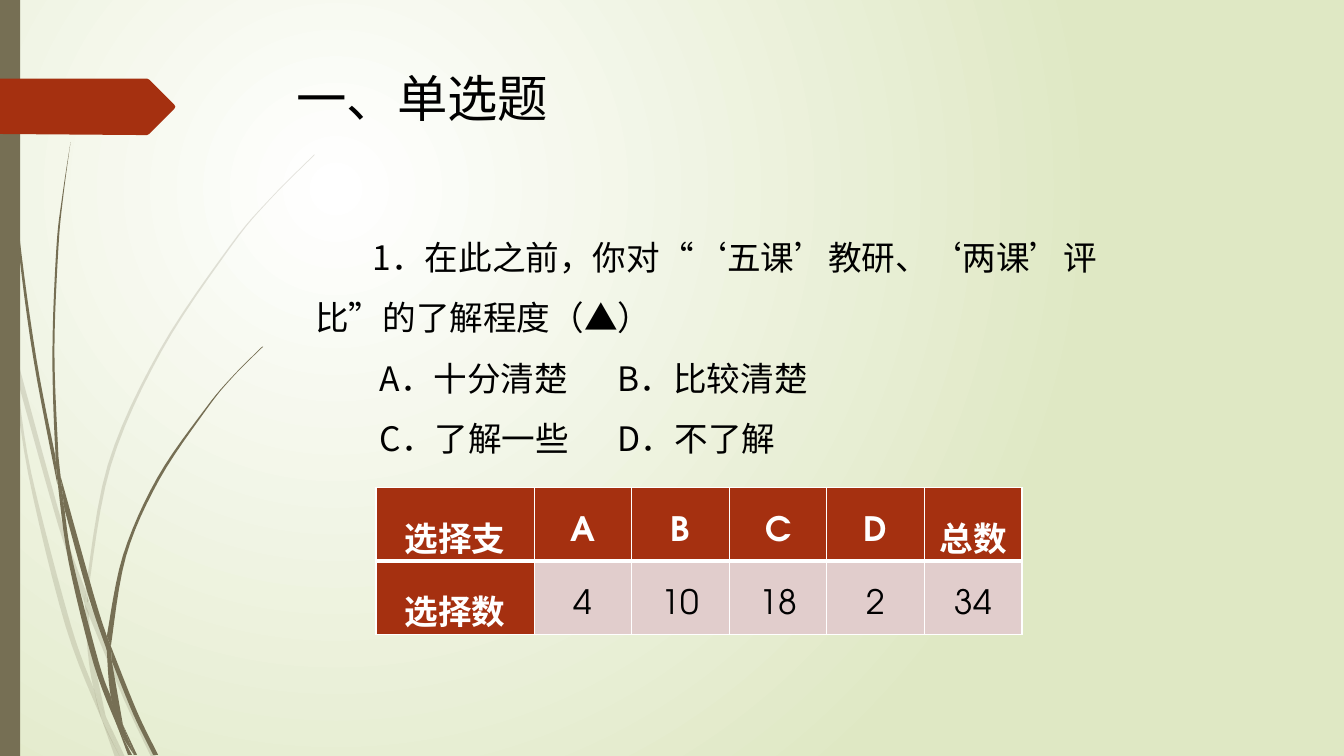
from dataclasses import dataclass

from lxml.etree import SubElement
from pptx import Presentation
from pptx.dml.color import RGBColor
from pptx.enum.lang import MSO_LANGUAGE_ID
from pptx.enum.shapes import MSO_SHAPE
from pptx.enum.text import MSO_ANCHOR, MSO_AUTO_SIZE, PP_ALIGN
from pptx.oxml.ns import qn
from pptx.util import Pt


@dataclass(frozen=True)
class Theme:
    text_font: str = "Noto Sans CJK SC"
    table_font: str = "TeX Gyre Adventor"
    title_size: int = 36
    body_size: int = 24
    black: str = "000000"
    white: str = "FFFFFF"
    meadow: str = "DFE8C4"
    stem: str = "766F54"
    brick: str = "A53010"
    blush: str = "E1CDCC"


THEME = Theme()
GRID = 0.72  # points in one unit of the outlines below

# Each blade of grass: one edge going down, the other edge coming back.
PALE_BLADES = [
    ([(0, 282), (9, 322), (11, 350)], [(10, 344), (0, 299)]),
    ([(14, 345), (62, 520), (85, 586)], [(84, 599), (58, 522), (17, 376)]),
    ([(88, 596), (127, 692), (155, 751)], [(150, 751), (123, 694), (88, 610)]),
    ([(105, 711), (124, 751)], [(119, 751)]),
    ([(11, 350), (28, 470), (65, 621), (101, 714)],
     [(93, 683), (70, 619), (31, 469), (17, 376)]),
    ([(84, 599), (87, 646), (93, 683), (105, 711)], [(91, 646), (88, 608)]),
    ([(312, 153), (268, 197), (228, 244), (158, 348), (107, 461), (85, 584)],
     [(88, 596), (88, 584), (110, 462), (160, 349), (229, 245), (268, 198), (312, 154)]),
    ([(101, 714), (114, 751)], [(119, 751)]),
    ([(85, 586), (84, 599), (88, 610)], [(88, 596)]),
    ([(93, 683), (101, 714), (119, 751)], [(105, 711), (96, 692)]),
]
DARK_BLADES = [
    ([(3, 0), (7, 110), (17, 233), (33, 355), (57, 481)],
     [(55, 453), (36, 355), (19, 232), (8, 109), (4, 0)]),
    ([(60, 472), (93, 590), (106, 631)], [(106, 645), (88, 592), (64, 505)]),
    ([(110, 641), (136, 706), (157, 749)], [(152, 749), (132, 708), (111, 656)]),
    ([(57, 477), (68, 557), (93, 659), (117, 722)],
     [(110, 691), (98, 657), (72, 556), (64, 505)]),
    ([(70, 141), (62, 193), (56, 245), (52, 349), (55, 449), (60, 472)],
     [(58, 453), (54, 349), (58, 245), (63, 193), (70, 141)]),
    ([(122, 719), (136, 749)], [(133, 749)]),
    ([(55, 449), (57, 477), (64, 505)], [(60, 472)]),
    ([(260, 344), (231, 373), (204, 405), (156, 474), (122, 551), (106, 631)],
     [(110, 641), (125, 552), (158, 476), (205, 406), (231, 374), (261, 344)]),
    ([(117, 722), (127, 749)], [(131, 749)]),
    ([(106, 645), (110, 691), (122, 719)], [(111, 656)]),
    ([(106, 631), (106, 645), (111, 656)], [(110, 641)]),
    ([(110, 691), (117, 722), (133, 749)], [(122, 719), (116, 706)]),
]
BANNER = [(0, 78), (146, 78), (148, 79), (173, 104), (174, 106), (173, 108),
          (148, 133), (146, 134), (136, 134), (0, 133)]


def rgb(value):
    return RGBColor.from_string(value)


def smooth(edge, steps=6):
    """Return points on a Catmull-Rom curve through the points of an edge."""
    if len(edge) < 3:
        return edge
    padded = [edge[0], *edge, edge[-1]]
    curve = []
    for a, b, c, d in zip(padded, padded[1:], padded[2:], padded[3:]):
        for step in range(steps):
            t = step / steps
            curve.append(tuple(
                q + t * (s - p) / 2
                + t * t * (2 * p - 5 * q + 4 * s - r) / 2
                + t ** 3 * (3 * q - p - 3 * s + r) / 2
                for p, q, s, r in zip(a, b, c, d)))
    return curve + [edge[-1]]


def paint(shape, color, opacity=100):
    shape.shadow.inherit = False
    shape.fill.solid()
    shape.fill.fore_color.rgb = rgb(color)
    shape.line.fill.background()
    if opacity < 100:
        tint = shape.element.spPr.find(f"{qn('a:solidFill')}/{qn('a:srgbClr')}")
        SubElement(tint, qn("a:alpha"), val=str(opacity * 1000))


def add_outline(shapes, points, color, opacity=100):
    corners = [(Pt(x * GRID), Pt(y * GRID)) for x, y in points]
    builder = shapes.build_freeform(*corners[0])
    builder.add_line_segments(corners[1:], close=True)
    paint(builder.convert_to_shape(), color, opacity)


def add_grass(page, blades, opacity):
    tuft = page.shapes.add_group_shape()
    for down, back in blades:
        add_outline(tuft.shapes, smooth(down) + smooth(back), THEME.stem, opacity)


def set_background(page):
    """Fill the page with a radial gradient centred in its upper left quarter."""
    fill = page.background.fill
    fill.gradient()
    for stop, color in zip(fill.gradient_stops, (THEME.white, THEME.meadow)):
        stop.color.rgb = rgb(color)
    gradient = page.element.find(f".//{qn('a:gradFill')}")
    gradient.remove(gradient.find(qn("a:lin")))
    circle = SubElement(gradient, qn("a:path"), path="circle")
    SubElement(circle, qn("a:fillToRect"), l="50000", t="50000", r="100000", b="100000")


def add_span(para, text, size, color, font=THEME.text_font, bold=False):
    span = para.add_run()
    span.text = text
    span.font.size = Pt(size)
    span.font.bold = bold
    span.font.color.rgb = rgb(color)
    span.font.name = font
    span.font.language_id = MSO_LANGUAGE_ID.SIMPLIFIED_CHINESE
    SubElement(span.font._element, qn("a:ea"), typeface=THEME.text_font)


def place(box, left, top, width, height, margin_top):
    """Move a placeholder in front of the decoration and prepare its frame."""
    box.left, box.top, box.width, box.height = map(Pt, (left, top, width, height))
    box.element.getparent().append(box.element)
    frame = box.text_frame
    frame.word_wrap = True
    frame.auto_size = MSO_AUTO_SIZE.NONE
    frame.vertical_anchor = MSO_ANCHOR.TOP
    frame.margin_top = Pt(margin_top)
    return frame


def fill_title(box, text):
    para = place(box, 204.5, 48, 702, 101, 0).paragraphs[0]
    para.alignment = PP_ALIGN.LEFT
    add_span(para, text, THEME.title_size, THEME.black)


def fill_question(box, lines):
    frame = place(box, 218, 148, 606, 215, 6.5)
    for number, (indent, text) in enumerate(lines):
        para = frame.add_paragraph() if number else frame.paragraphs[0]
        para.alignment = PP_ALIGN.LEFT
        para.line_spacing = Pt(43.2)
        para.space_before = Pt(0)
        add_span(para, text, THEME.body_size, THEME.black)
        layout = para._p.get_or_add_pPr()
        layout.set("marL", "0")
        layout.set("indent", str(Pt(indent)))
        SubElement(layout, qn("a:buNone"))
        stops = SubElement(layout, qn("a:tabLst"))
        SubElement(stops, qn("a:tab"), pos=str(Pt(214)), algn="l")


def set_borders(cell, bottom):
    properties = cell._tc.get_or_add_tcPr()
    for index, (side, width) in enumerate(dict(lnL=1, lnR=1, lnT=1, lnB=bottom).items()):
        line = properties.makeelement(qn(f"a:{side}"), {"w": str(Pt(width))})
        solid = SubElement(line, qn("a:solidFill"))
        SubElement(solid, qn("a:srgbClr"), val=THEME.white)
        properties.insert(index, line)


def add_answer_table(page, rows):
    widths = [113] + [69.7] * (len(rows[0]) - 1)
    table = page.shapes.add_table(len(rows), len(widths), Pt(268.6), Pt(348.5),
                                  Pt(sum(widths)), Pt(52 * len(rows))).table
    for column, width in zip(table.columns, widths):
        column.width = Pt(width)
    for r, row in enumerate(rows):
        table.rows[r].height = Pt(52)
        for c, text in enumerate(row):
            heading = r == 0 or c == 0
            cell = table.cell(r, c)
            cell.fill.solid()
            cell.fill.fore_color.rgb = rgb(THEME.brick if heading else THEME.blush)
            cell.vertical_anchor = MSO_ANCHOR.MIDDLE
            cell.margin_left = cell.margin_right = Pt(5)
            cell.margin_top = cell.margin_bottom = Pt(0)
            para = cell.text_frame.paragraphs[0]
            para.alignment = PP_ALIGN.CENTER
            para.line_spacing = 1.5
            add_span(para, text, THEME.body_size, THEME.white if heading else THEME.black,
                     THEME.table_font, heading)
            set_borders(cell, 3 if r == 0 else 1)


def main():
    deck = Presentation()
    deck.slide_width, deck.slide_height = Pt(960), Pt(540)
    page = deck.slides.add_slide(deck.slide_layouts[1])
    set_background(page)
    add_grass(page, PALE_BLADES, 20)
    add_grass(page, DARK_BLADES, 100)
    paint(page.shapes.add_shape(MSO_SHAPE.RECTANGLE, 0, 0, Pt(14.4), Pt(540)), THEME.stem)
    add_outline(page.shapes, BANNER, THEME.brick)
    fill_title(page.shapes.title, "一、单选题")
    add_answer_table(page, [["选择支", "A", "B", "C", "D", "总数"],
                            ["选择数", "4", "10", "18", "2", "34"]])
    fill_question(page.placeholders[1], [
        (41, "1．在此之前，你对“‘五课’教研、‘两课’评比”的了解程度（▲）"),
        (46, "A．十分清楚\tB．比较清楚"),
        (46, "C．了解一些\tD．不了解")])
    deck.save("out.pptx")


if __name__ == "__main__":
    main()
